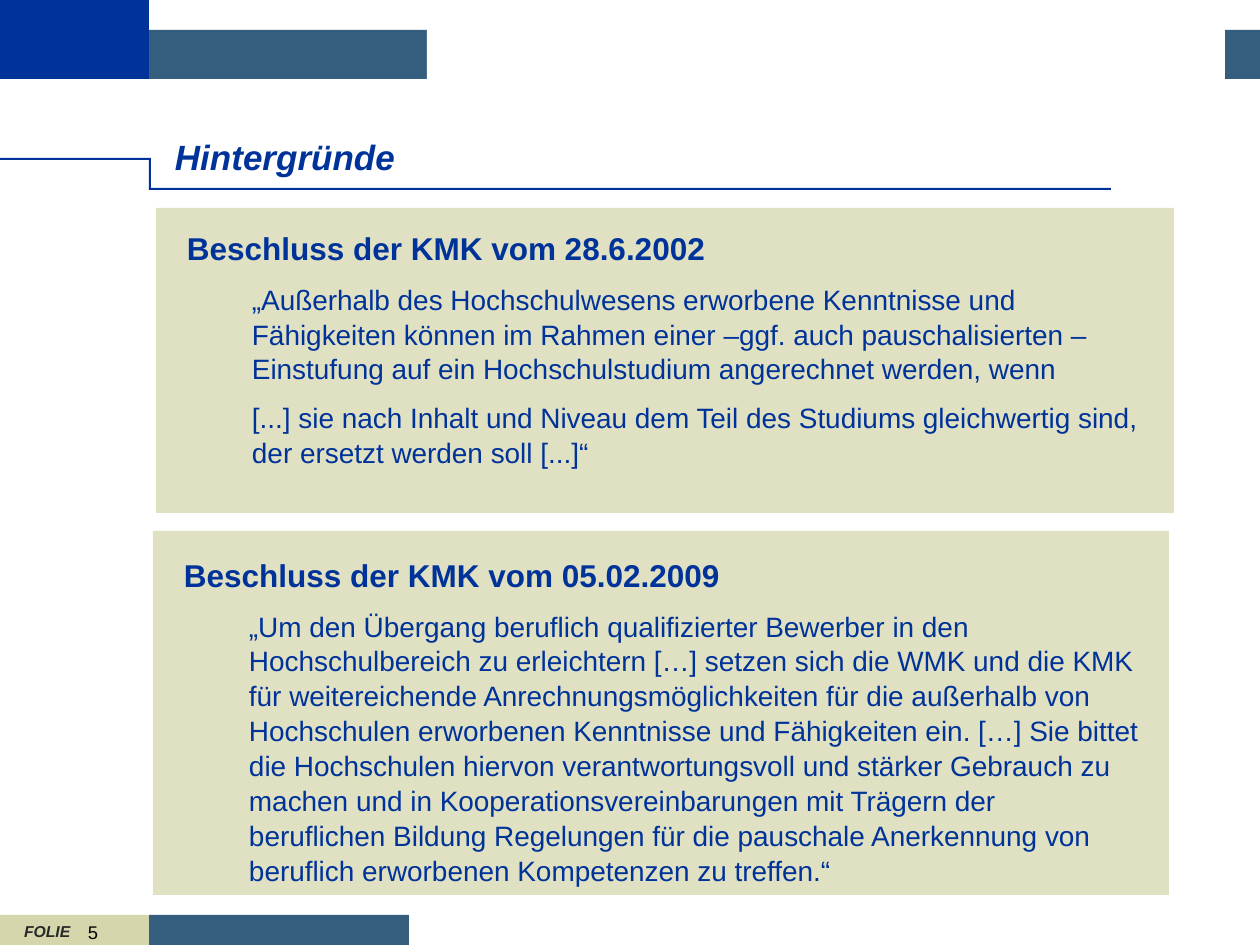
from pptx import Presentation
from pptx.dml.color import RGBColor
from pptx.enum.shapes import MSO_SHAPE
from pptx.enum.text import MSO_ANCHOR
from pptx.util import Emu, Pt

PX = 914400 // 126
COLORS = {
    "blue": "003399", "teal": "355D7E", "white": "FFFFFF",
    "olive": "D6D6AD", "sand": "E0E0C2", "dark": "292929", "black": "000000",
}
BARS = [
    ((143, 30, 1117, 49), "teal"),
    ((427, 0, 541, 106), "white"),
    ((0, 0, 149, 79), "blue"),
    ((149, 915, 260, 30), "teal"),
    ((0, 915, 149, 30), "olive"),
    ((0, 158, 149, 2), "blue"),
    ((149, 188, 962, 2), "blue"),
    ((149, 158, 2, 31), "blue"),
    ((898, 0, 327, 106), "white"),
]
PANELS = [
    ((156, 208, 1018, 305), (187, 229, 958, 262), "Beschluss der KMK vom 28.6.2002", [
        "„Außerhalb des Hochschulwesens erworbene Kenntnisse und Fähigkeiten können "
        "im Rahmen einer –ggf. auch pauschalisierten – Einstufung auf ein "
        "Hochschulstudium angerechnet werden, wenn",
        "[...] sie nach Inhalt und Niveau dem Teil des Studiums gleichwertig sind, "
        "der ersetzt werden soll [...]“",
    ]),
    ((153, 531, 1016, 364), (184, 556, 955, 314), "Beschluss der KMK vom 05.02.2009", [
        "„Um den Übergang beruflich qualifizierter Bewerber in den Hochschulbereich "
        "zu erleichtern […] setzen sich die WMK und die KMK für weitereichende "
        "Anrechnungsmöglichkeiten für die außerhalb von Hochschulen erworbenen "
        "Kenntnisse und Fähigkeiten ein. […] Sie bittet die Hochschulen hiervon "
        "verantwortungsvoll und stärker Gebrauch zu machen und in "
        "Kooperationsvereinbarungen mit Trägern der beruflichen Bildung Regelungen "
        "für die pauschale Anerkennung von beruflich erworbenen Kompetenzen zu treffen.“",
    ]),
]


def scale(box):
    return [Emu(n * PX) for n in box]


def add_rect(shapes, box, color):
    rect = shapes.add_shape(MSO_SHAPE.RECTANGLE, *scale(box))
    rect.shadow.inherit = False
    rect.fill.solid()
    rect.fill.fore_color.rgb = RGBColor.from_string(COLORS[color])
    rect.line.fill.background()


def add_box(shapes, box, anchor=MSO_ANCHOR.TOP):
    frame = shapes.add_textbox(*scale(box)).text_frame
    frame.word_wrap = True
    frame.vertical_anchor = anchor
    frame.margin_left = frame.margin_right = 0
    frame.margin_top = frame.margin_bottom = 0
    return frame


def add_run(para, text, size, color="blue", bold=False, italic=False):
    run = para.add_run()
    run.text = text
    font = run.font
    font.name = "Arial"
    font.size = Pt(size)
    font.bold = bold
    font.italic = italic
    font.color.rgb = RGBColor.from_string(COLORS[color])


def add_quote(frame, text):
    para = frame.add_paragraph()
    para.level = 1
    para.space_before = Pt(8)
    para.line_spacing = 1.04
    props = para._p.get_or_add_pPr()
    props.set("marL", str(65 * PX))
    props.set("indent", "0")
    add_run(para, text, 16)


def add_panel(slide, area, box, title, quotes):
    group = slide.shapes.add_group_shape()
    add_rect(group.shapes, area, "sand")
    frame = add_box(group.shapes, box)
    add_run(frame.paragraphs[0], title, 18, bold=True)
    for quote in quotes:
        add_quote(frame, quote)


def main():
    deck = Presentation()
    deck.slide_width, deck.slide_height = scale((1260, 945))
    slide = deck.slides.add_slide(deck.slide_layouts[6])
    shapes = slide.shapes
    for box, color in BARS:
        add_rect(shapes, box, color)
    label = add_box(shapes, (24, 922, 81, 19), MSO_ANCHOR.BOTTOM)
    add_run(label.paragraphs[0], "FOLIE", 9, "dark", True, True)
    number = add_box(shapes, (88, 921, 53, 21))
    add_run(number.paragraphs[0], "5", 10.5, "black")
    heading = add_box(shapes, (175, 135, 1024, 54))
    add_run(heading.paragraphs[0], "Hintergründe", 20, bold=True, italic=True)
    for panel in PANELS:
        add_panel(slide, *panel)
    deck.save("out.pptx")


if __name__ == "__main__":
    main()
